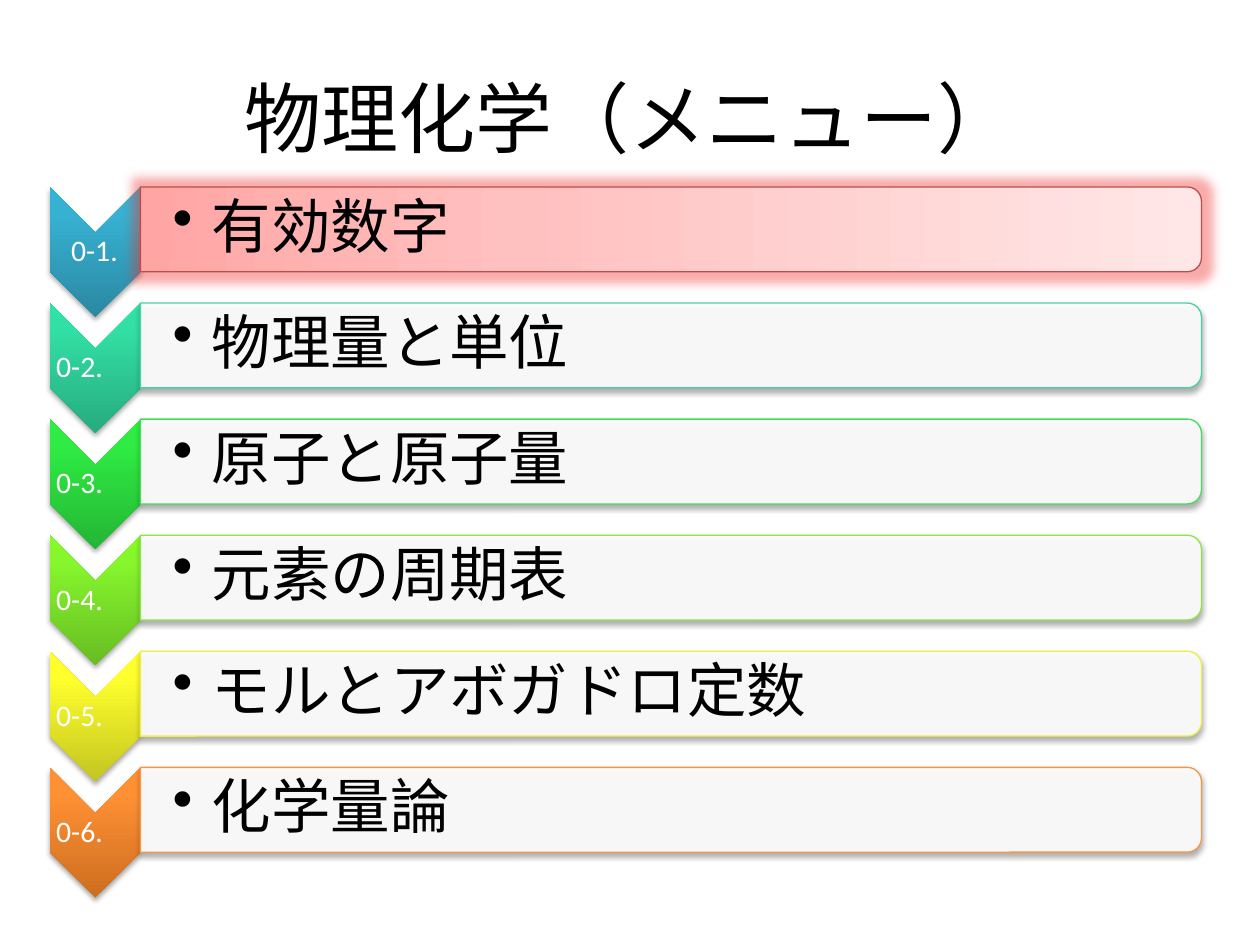
from lxml.etree import SubElement
from pptx import Presentation
from pptx.dml.color import RGBColor
from pptx.enum.shapes import MSO_SHAPE as Shape
from pptx.enum.text import MSO_ANCHOR as Anchor, PP_ALIGN as Align
from pptx.oxml.ns import qn
from pptx.util import Cm, Pt


def add_element(parent, tag, color=None, alpha=None, **attributes):
    element = SubElement(parent, qn(tag), {k: str(v) for k, v in attributes.items()})
    if color:
        color_element = add_element(element, "a:srgbClr", val=RGBColor.from_string(color))
        if alpha:
            add_element(color_element, "a:alpha", val=alpha * 1000)
    return element


def write_text(text_frame, text, size, color, frame_format, paragraph_format):
    for name, value in frame_format.items():
        setattr(text_frame, name, value)
    paragraph = text_frame.paragraphs[0]
    for name, value in paragraph_format.items():
        setattr(paragraph, name, value)
    run = paragraph.add_run()
    run.text = text
    for name, value in {"name": "Calibri", "size": Pt(size)}.items():
        setattr(run.font, name, value)
    run.font.color.rgb = RGBColor.from_string(color)
    return paragraph


LABEL_FRAME = {"word_wrap": True, "vertical_anchor": Anchor.MIDDLE,
               "margin_left": Cm(0.03), "margin_right": Cm(0.03),
               "margin_top": Cm(0.03), "margin_bottom": Cm(0.03)}
TOPIC_FRAME = {"word_wrap": True, "vertical_anchor": Anchor.MIDDLE,
               "margin_left": Cm(0.66), "margin_right": Cm(0.05),
               "margin_top": Cm(0.05), "margin_bottom": Cm(0.05)}
LABEL_PARAGRAPH = {"alignment": Align.CENTER, "line_spacing": 0.9}
TOPIC_PARAGRAPH = {"alignment": Align.LEFT, "level": 1, "line_spacing": 0.9}
PITCH = 2.34
HIGHLIGHT = [(0, "FFA6A5"), (35, "FFC0BF"), (100, "FFE7E7")]
ROWS = [
    ("0-1.", "有効数字", ("2A88A2", "37B1D2", "34B4D6"), "BF4C48"),
    ("0-2.　", "物理量と単位", ("27AB7E", "32DFA4", "2FE3A6"), "49D1A3"),
    ("0-3.　", "原子と原子量", ("24B534", "2FEB43", "2CEF41"), "47DC57"),
    ("0-4.　", "元素の周期表", ("67BD22", "86F62D", "86FB29"), "8DE646"),
    ("0-5.　", "モルとアボガドロ定数", ("C4C521", "FEFF2C", "FEFF2D"), "EEEF46"),
    ("0-6.　", "化学量論", ("CC6E20", "FF9034", "FF9136"), "F79646"),
]

presentation = Presentation()
presentation.slide_width, presentation.slide_height = Cm(25.4), Cm(19.05)
slide = presentation.slides.add_slide(presentation.slide_layouts[5])
title = slide.shapes.title
for name, value in {"left": Cm(1.27), "top": Cm(0.76),
                    "width": Cm(22.86), "height": Cm(3.18)}.items():
    setattr(title, name, value)
write_text(title.text_frame, "物理化学（メニュー）", 44, "000000",
           {"vertical_anchor": Anchor.MIDDLE}, {"alignment": Align.CENTER})

for index, (label, topic, shades, outline) in enumerate(ROWS):
    offset = index * PITCH
    highlighted = index == 0

    chevron = slide.shapes.add_shape(
        Shape.CHEVRON, Cm(0.61), Cm(4.17 + offset), Cm(2.62), Cm(1.83))
    chevron.line.fill.background()
    label_box = slide.shapes.add_textbox(
        Cm(0.99), Cm(4.69 + offset), Cm(1.83), Cm(0.79))
    label_paragraph = write_text(
        label_box.text_frame, label, 17, "FFFFFF", LABEL_FRAME, LABEL_PARAGRAPH)

    bar = slide.shapes.add_shape(
        Shape.ROUND_2_SAME_RECTANGLE, Cm(12.67), Cm(-6.07 + offset), Cm(1.71), Cm(21.39))
    bar.line.color.rgb = RGBColor.from_string(outline)
    bar.line.width = Pt(0.75)
    topic_box = slide.shapes.add_textbox(
        Cm(2.82), Cm(3.86 + offset), Cm(21.31), Cm(1.52))
    topic_paragraph = write_text(
        topic_box.text_frame, topic, 34, "000000", TOPIC_FRAME, TOPIC_PARAGRAPH)

    for paragraph, percent in ((label_paragraph, 35), (topic_paragraph, 15)):
        properties = paragraph._p.get_or_add_pPr()
        spacing = add_element(properties, "a:spcAft")
        add_element(spacing, "a:spcPct", val=percent * 1000)
    properties.set("marL", str(Cm(0.79)))
    properties.set("indent", str(-Cm(0.79)))
    add_element(properties, "a:buChar", char="•")

    gradients = [(chevron, 180, list(zip((0, 80, 100), shades)))]
    if highlighted:
        gradients.append((bar, 90, HIGHLIGHT))
    else:
        bar.fill.solid()
        bar.fill.fore_color.rgb = RGBColor.from_string("FFFFFF")
        fill_color = bar._element.spPr.find(qn("a:solidFill"))[0]
        add_element(fill_color, "a:alpha", val=90000)
    for shape, angle, stops in gradients:
        shape.fill.gradient()
        shape.fill.gradient_angle = angle
        stop_list = shape._element.spPr.find(qn("a:gradFill")).find(qn("a:gsLst"))
        stop_list[:] = []
        for position, color in stops:
            add_element(stop_list, "a:gs", color, pos=position * 1000)

    for shape in (chevron, bar):
        shape.rotation = 90
        shape.shadow.inherit = False
        effects = shape._element.spPr.find(qn("a:effectLst"))
        if shape is bar and highlighted:
            add_element(effects, "a:glow", "EE2F2B", 40, rad=Pt(11))
        else:
            add_element(effects, "a:outerShdw", "000000", 35, blurRad=Pt(3.1),
                        dist=Pt(1.8), dir=5400000, rotWithShape=0)

presentation.save("out.pptx")
